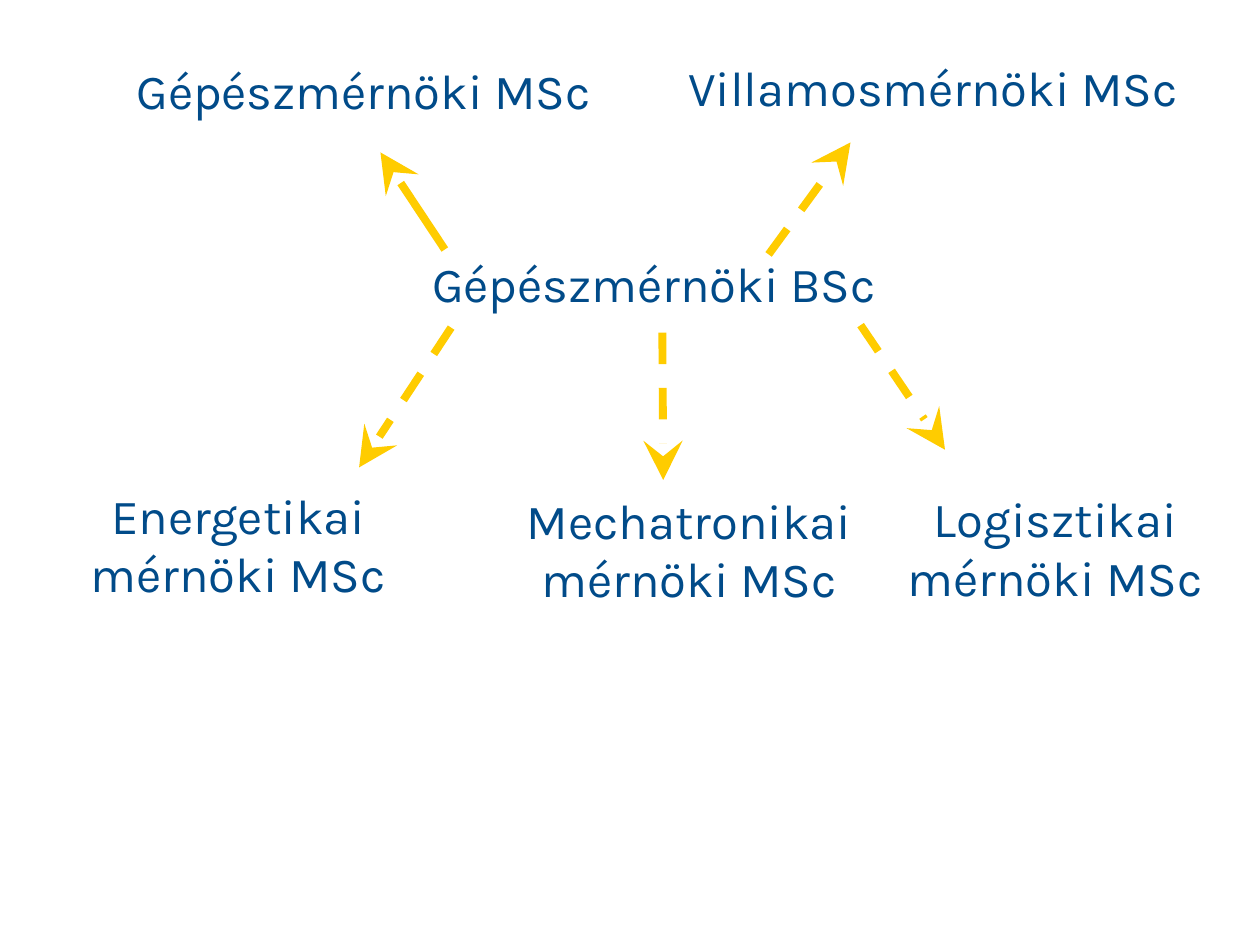
"""Build a slide of the MSc programmes that follow a mechanical engineering BSc."""
from lxml.etree import SubElement
from pptx import Presentation
from pptx.dml.color import RGBColor
from pptx.enum.dml import MSO_LINE_DASH_STYLE as Dash
from pptx.enum.shapes import MSO_CONNECTOR as Connector
from pptx.enum.text import PP_ALIGN as Align
from pptx.oxml.ns import qn
from pptx.util import Pt

COLORS = {"text": "014B89", "arrow": "FFCC00"}
FONT = {"name": "Karla", "size": Pt(28)}
LINE_HEIGHT, PADDING = 33.8, 7.2

PROGRAMMES = [
    ("Gépészmérnöki BSc", 107.3, 141.1, 532.8, 1),
    ("Gépészmérnöki MSc", 56.2, 31, 303.1, 1),
    ("Villamosmérnöki MSc", 375.8, 29.5, 314.6, 1),
    ("Energetikai mérnöki MSc", 0, 273.6, 272.2, 2),
    ("Mechatronikai mérnöki MSc", 267.8, 276.5, 252, 2),
    ("Logisztikai mérnöki MSc", 486, 275.8, 234, 2),
]
ARROWS = [
    ((254.2, 142.6), (217.4, 87.1), Dash.SOLID),
    ((439.2, 145.4), (486, 81.4), Dash.DASH),
    ((257.8, 187.2), (205.2, 267.1), Dash.DASH),
    ((378.5, 190.1), (379, 274.3), Dash.DASH),
    ((491.8, 185.8), (540, 257), Dash.DASH),
]


def add_programme(slide, text, left, top, width, lines):
    """Add a centred programme name."""
    height = lines * LINE_HEIGHT + PADDING
    box = slide.shapes.add_textbox(Pt(left), Pt(top), Pt(width), Pt(height))
    box.text_frame.word_wrap = True
    paragraph = box.text_frame.paragraphs[0]
    paragraph.alignment = Align.CENTER
    run = paragraph.add_run()
    run.text = text
    for name, value in FONT.items():
        setattr(run.font, name, value)
    run.font.color.rgb = RGBColor.from_string(COLORS["text"])


def add_arrow(slide, start, end, dash):
    """Add an arrow with a large stealth head and no shadow."""
    points = [Pt(value) for value in (*start, *end)]
    arrow = slide.shapes.add_connector(Connector.STRAIGHT, *points)
    arrow.line.color.rgb = RGBColor.from_string(COLORS["arrow"])
    for name, value in {"width": Pt(4.5), "dash_style": dash}.items():
        setattr(arrow.line, name, value)
    properties = arrow.element.spPr
    head = {"type": "stealth", "w": "lg", "len": "lg"}
    SubElement(properties.find(qn("a:ln")), qn("a:tailEnd"), head)
    SubElement(properties, qn("a:effectLst"))


def main():
    """Build and save the presentation."""
    presentation = Presentation()
    presentation.slide_width, presentation.slide_height = Pt(720), Pt(540)
    slide = presentation.slides.add_slide(presentation.slide_layouts[6])
    for programme in PROGRAMMES:
        add_programme(slide, *programme)
    for arrow in ARROWS:
        add_arrow(slide, *arrow)
    presentation.save("out.pptx")


if __name__ == "__main__":
    main()
